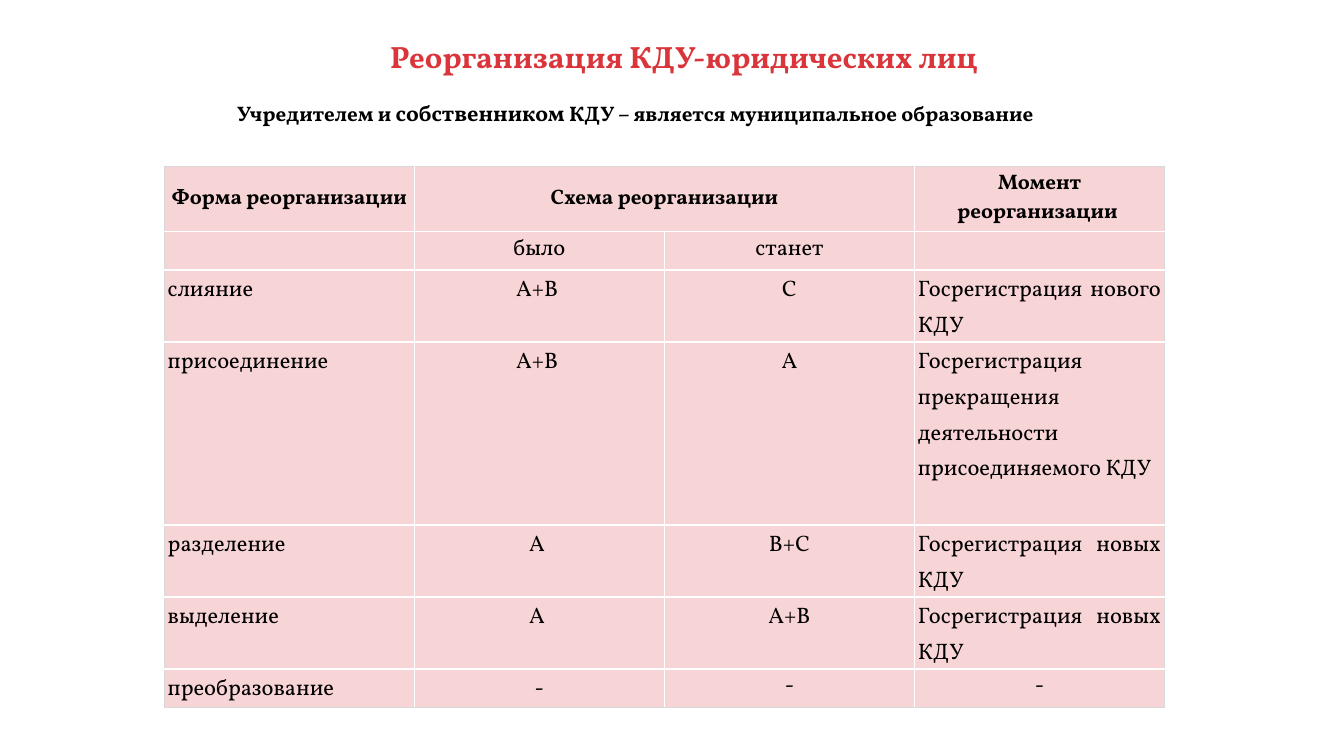
"""Build the slide on the reorganisation of cultural institutions."""
from dataclasses import dataclass
from typing import Any

from lxml import etree
from pptx import Presentation, util as u
from pptx.dml.color import RGBColor
from pptx.enum import text
from pptx.oxml.ns import qn

CENTER, JUSTIFY = text.PP_ALIGN.CENTER, text.PP_ALIGN.JUSTIFY


@dataclass(frozen=True)
class Theme:
    font: str = "Vollkorn"
    title: str = "DA353A"
    body: str = "000000"
    cell: str = "F7D4D5"
    inner: tuple[str, float] = ("FFFFFF", 2.25)
    outer: tuple[str, float] = ("D8D8D8", 0.5)
    title_size: int = 44
    head_size: int = 30
    body_size: int = 32


@dataclass(frozen=True)
class Area:
    """A place on the slide, in percent of its width and height."""
    left: float
    top: float
    width: float
    height: float

    def inches(self) -> tuple[int, int, int, int]:
        return (across(self.left), down(self.top), across(self.width), down(self.height))


@dataclass(frozen=True)
class Entry:
    words: str
    align: Any = CENTER
    bold: bool = False
    spaced: bool = True


THEME = Theme()
SLIDE_WIDTH, SLIDE_HEIGHT = u.Inches(26.67), u.Inches(15)
TITLE_AREA = Area(13.76, 4.2, 72.4, 10.2)
OWNER_AREA = Area(6.19, 12.73, 82.49, 4.27)
ROW_HEIGHTS = (8.73, 5.07, 9.53, 24.2, 9.53, 9.53, 5.07)
TABLE_AREA = Area(12.22, 21.93, 74.43, sum(ROW_HEIGHTS))
COLUMN_COUNT = 4

HEADINGS = ("Форма реорганизации", "Схема реорганизации", "", "Момент реорганизации ")
STAGES = ("", "было", "станет", "")
FORMS = (
    ("слияние ", "А+В ", "С", "Госрегистрация нового КДУ"),
    ("присоединение", "А+В ", "А",
     "Госрегистрация прекращения деятельности присоединяемого КДУ"),
    ("разделение", "А ", "В+С", "Госрегистрация новых КДУ"),
    ("выделение", "А ", "А+В", "Госрегистрация новых КДУ"),
)
CONVERSION = (Entry("преобразование", JUSTIFY), Entry("-"),
              Entry("-", spaced=False), Entry("-", spaced=False))


def across(percent: float) -> int:
    return int(SLIDE_WIDTH * percent / 100)


def down(percent: float) -> int:
    return int(SLIDE_HEIGHT * percent / 100)


def write(para, words: str, *, size: int, color: str = THEME.body, bold: bool = False,
          align: Any = CENTER, spaced: bool = False) -> None:
    """Add a formatted span to a paragraph."""
    para.alignment = align
    if spaced:
        para.line_spacing, para.space_after = 1.15, u.Pt(12)
    span = para.add_run()
    span.text = words
    span.font.name, span.font.size, span.font.bold = THEME.font, u.Pt(size), bold
    span.font.color.rgb = RGBColor.from_string(color)


def draw_borders(cell, row: int, column: int) -> None:
    """Give a cell pale grey outer edges and white inner edges."""
    at_edge = {"L": column == 0, "R": column == COLUMN_COUNT - 1,
               "T": row == 0, "B": row == len(ROW_HEIGHTS) - 1}
    properties = cell._tc.get_or_add_tcPr()
    for index, (side, outside) in enumerate(at_edge.items()):
        color, width = THEME.outer if outside else THEME.inner
        line = etree.Element(qn(f"a:ln{side}"), w=str(int(u.Pt(width))))
        fill = etree.SubElement(line, qn("a:solidFill"))
        etree.SubElement(fill, qn("a:srgbClr"), val=color)
        properties.insert(index, line)


def draw_cell(cell, entry: Entry, row: int, column: int) -> None:
    cell.fill.solid()
    cell.fill.fore_color.rgb = RGBColor.from_string(THEME.cell)
    draw_borders(cell, row, column)
    if not entry.words:
        return
    if entry.bold:
        cell.vertical_anchor = text.MSO_ANCHOR.MIDDLE
    if entry.spaced:
        cell.margin_left = cell.margin_right = u.Inches(0.07)
        cell.margin_top = cell.margin_bottom = 0
    write(cell.text_frame.paragraphs[0], entry.words, bold=entry.bold,
          size=THEME.head_size if entry.bold else THEME.body_size,
          align=entry.align, spaced=entry.spaced)


def draw_table(page) -> None:
    rows = [[Entry(words, bold=True, spaced=False) for words in HEADINGS],
            [Entry(words, spaced=False) for words in STAGES]]
    for form, before, after, moment in FORMS:
        rows.append([Entry(form, JUSTIFY), Entry(before), Entry(after),
                     Entry(moment, JUSTIFY)])
    rows.append(CONVERSION)

    table = page.shapes.add_table(len(rows), COLUMN_COUNT, *TABLE_AREA.inches()).table
    table.first_row = table.horz_banding = False
    for column in table.columns:
        column.width = across(TABLE_AREA.width / COLUMN_COUNT)
    for row, height in zip(table.rows, ROW_HEIGHTS):
        row.height = down(height)
    table.cell(0, 1).merge(table.cell(0, 2))
    for row, entries in enumerate(rows):
        for column, entry in enumerate(entries):
            draw_cell(table.cell(row, column), entry, row, column)


def draw_title(page) -> None:
    title = page.shapes.title
    title.left, title.top, title.width, title.height = TITLE_AREA.inches()
    frame = title.text_frame
    frame.word_wrap, frame.auto_size = True, text.MSO_AUTO_SIZE.NONE
    frame.vertical_anchor = text.MSO_ANCHOR.TOP
    frame.margin_left = frame.margin_right = frame.margin_top = frame.margin_bottom = 0
    para = frame.paragraphs[0]
    para._p.get_or_add_pPr().set("indent", str(int(u.Inches(0.5))))
    write(para, "Реорганизация КДУ-юридических лиц", size=THEME.title_size,
          color=THEME.title, bold=True, spaced=True)


def draw_owner(page) -> None:
    frame = page.shapes.add_textbox(*OWNER_AREA.inches()).text_frame
    frame.word_wrap, frame.auto_size = True, text.MSO_AUTO_SIZE.SHAPE_TO_FIT_TEXT
    for words, size in (("Учредителем и ", THEME.head_size),
                        ("собственником", THEME.body_size),
                        (" КДУ – является муниципальное образование ", THEME.head_size)):
        write(frame.paragraphs[0], words, size=size, bold=True)


def main() -> None:
    deck = Presentation()
    deck.slide_width, deck.slide_height = SLIDE_WIDTH, SLIDE_HEIGHT
    page = deck.slides.add_slide(deck.slide_layouts.get_by_name("Title Only"))
    draw_title(page)
    draw_owner(page)
    draw_table(page)
    deck.save("out.pptx")


if __name__ == "__main__":
    main()
